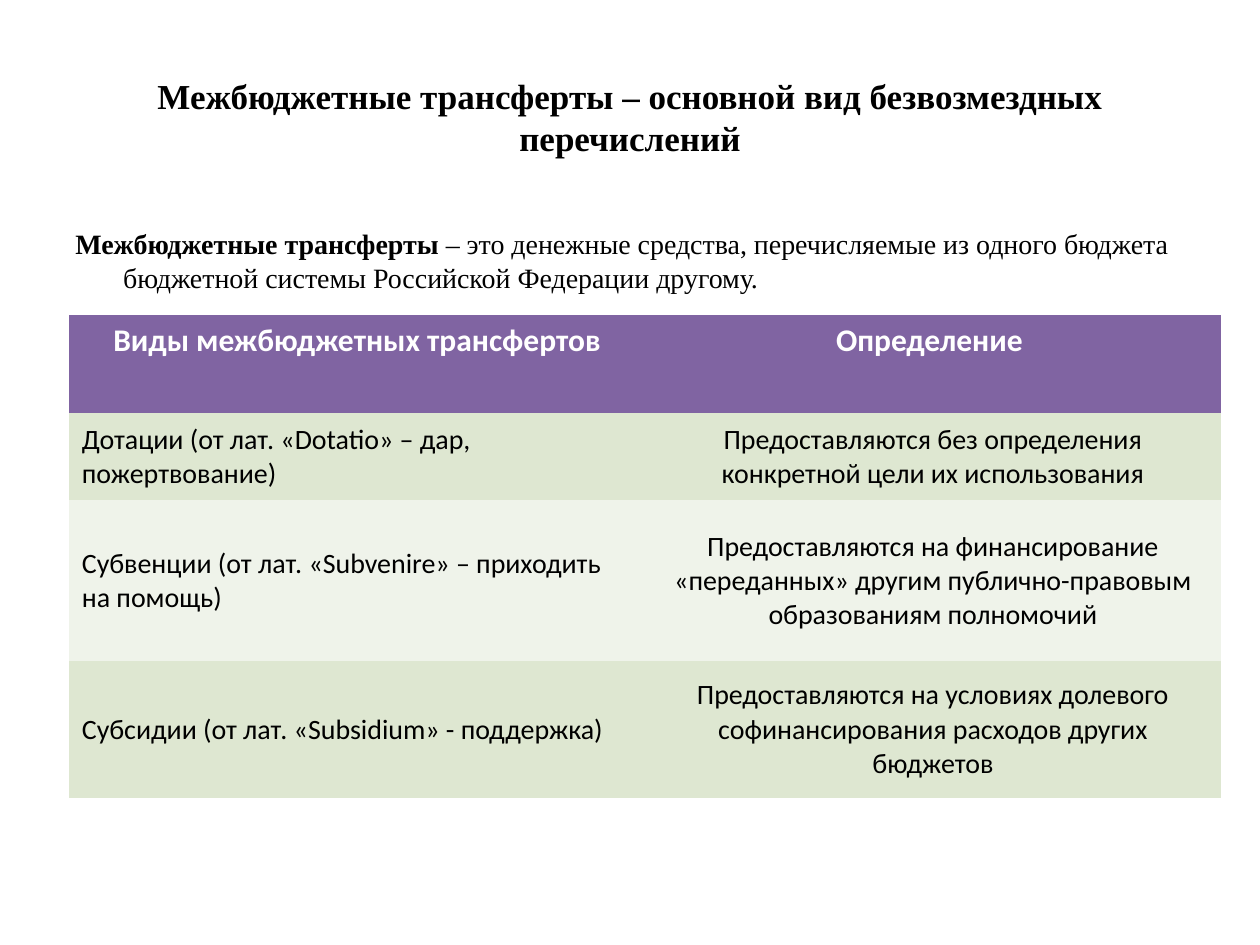
import pptx
import pptx.dml.color
import pptx.enum.text
import pptx.util

Inches = pptx.util.Inches
Pt = pptx.util.Pt
ALIGN = pptx.enum.text.PP_ALIGN
ANCHOR = pptx.enum.text.MSO_ANCHOR

COLORS = {
    "text": "000000",
    "header_text": "FFFFFF",
    "header": "8064A2",
    "odd_row": "DEE7D1",
    "even_row": "EFF3EA",
}
SERIF, SANS = "Times New Roman", "Calibri"

HEADINGS = ("Виды межбюджетных трансфертов", "Определение ")
TRANSFERS = [
    ("Дотации (от лат. «Dotatio» – дар, пожертвование)",
     "Предоставляются без определения конкретной цели их использования"),
    ("Субвенции (от лат. «Subvenire» – приходить на помощь)",
     "Предоставляются на финансирование «переданных» другим "
     "публично-правовым образованиям полномочий"),
    ("Субсидии (от лат. «Subsidium» - поддержка)",
     "Предоставляются на условиях долевого софинансирования расходов других бюджетов"),
]
ROW_HEIGHTS = (0.78, 0.69, 1.28, 1.08)


def rgb(name):
    return pptx.dml.color.RGBColor.from_string(COLORS[name])


def add_run(paragraph, text, size, font, bold=False, color="text"):
    run = paragraph.add_run()
    run.text = text
    run.font.size = Pt(size)
    run.font.name = font
    run.font.bold = bold
    run.font.color.rgb = rgb(color)


def add_text_frame(slide, left, top, width, height, anchor):
    frame = slide.shapes.add_textbox(
        Inches(left), Inches(top), Inches(width), Inches(height)).text_frame
    frame.word_wrap = True
    frame.vertical_anchor = anchor
    return frame


def add_title(slide, left, top, width, height):
    heading = add_text_frame(slide, left, top, width, height, ANCHOR.MIDDLE).paragraphs[0]
    heading.alignment = ALIGN.CENTER
    add_run(heading, "Межбюджетные трансферты – основной вид безвозмездных перечислений",
            20, SERIF, bold=True)


def add_definition(slide, left, top, width, height):
    definition = add_text_frame(slide, left, top, width, height, ANCHOR.TOP).paragraphs[0]
    definition.space_before = Pt(3.2)
    # Hanging indent
    properties = definition._p.get_or_add_pPr()
    properties.set("marL", str(Inches(0.38)))
    properties.set("indent", str(-Inches(0.38)))
    add_run(definition, "Межбюджетные трансферты ", 16, SERIF, bold=True)
    add_run(definition, "– это денежные средства, перечисляемые из одного бюджета "
            "бюджетной системы Российской Федерации другому.", 16, SERIF)


def add_transfer_table(slide, left, top, width, height):
    rows = [HEADINGS] + TRANSFERS
    table = slide.shapes.add_table(
        len(rows), len(HEADINGS),
        Inches(left), Inches(top), Inches(width), Inches(height)).table
    for row, row_height in zip(table.rows, ROW_HEIGHTS):
        row.height = Inches(row_height)

    for r, texts in enumerate(rows):
        is_header = r == 0
        fill = "header" if is_header else "odd_row" if r % 2 else "even_row"
        for c, text in enumerate(texts):
            cell = table.cell(r, c)
            cell.fill.solid()
            cell.fill.fore_color.rgb = rgb(fill)
            cell.vertical_anchor = ANCHOR.TOP if is_header else ANCHOR.MIDDLE
            paragraph = cell.text_frame.paragraphs[0]
            paragraph.alignment = ALIGN.CENTER if is_header or c else ALIGN.LEFT
            add_run(paragraph, text, 18 if is_header else 16, SANS, bold=is_header,
                    color="header_text" if is_header else "text")
    # Drop the default white grid lines: "No Style, No Grid"
    style = table._tbl.tblPr.find(pptx.oxml.ns.qn("a:tableStyleId"))
    style.text = "{2D5ABB26-0587-4C30-8999-92F81FD0307C}"


def main():
    presentation = pptx.Presentation()
    presentation.slide_width = Inches(10)
    presentation.slide_height = Inches(7.5)
    slide = presentation.slides.add_slide(presentation.slide_layouts[6])
    add_title(slide, 0.5, 0.3, 9, 1.25)
    add_definition(slide, 0.5, 1.75, 9, 4.95)
    add_transfer_table(slide, 0.55, 2.5, 9.14, sum(ROW_HEIGHTS))
    presentation.save("out.pptx")


if __name__ == "__main__":
    main()
